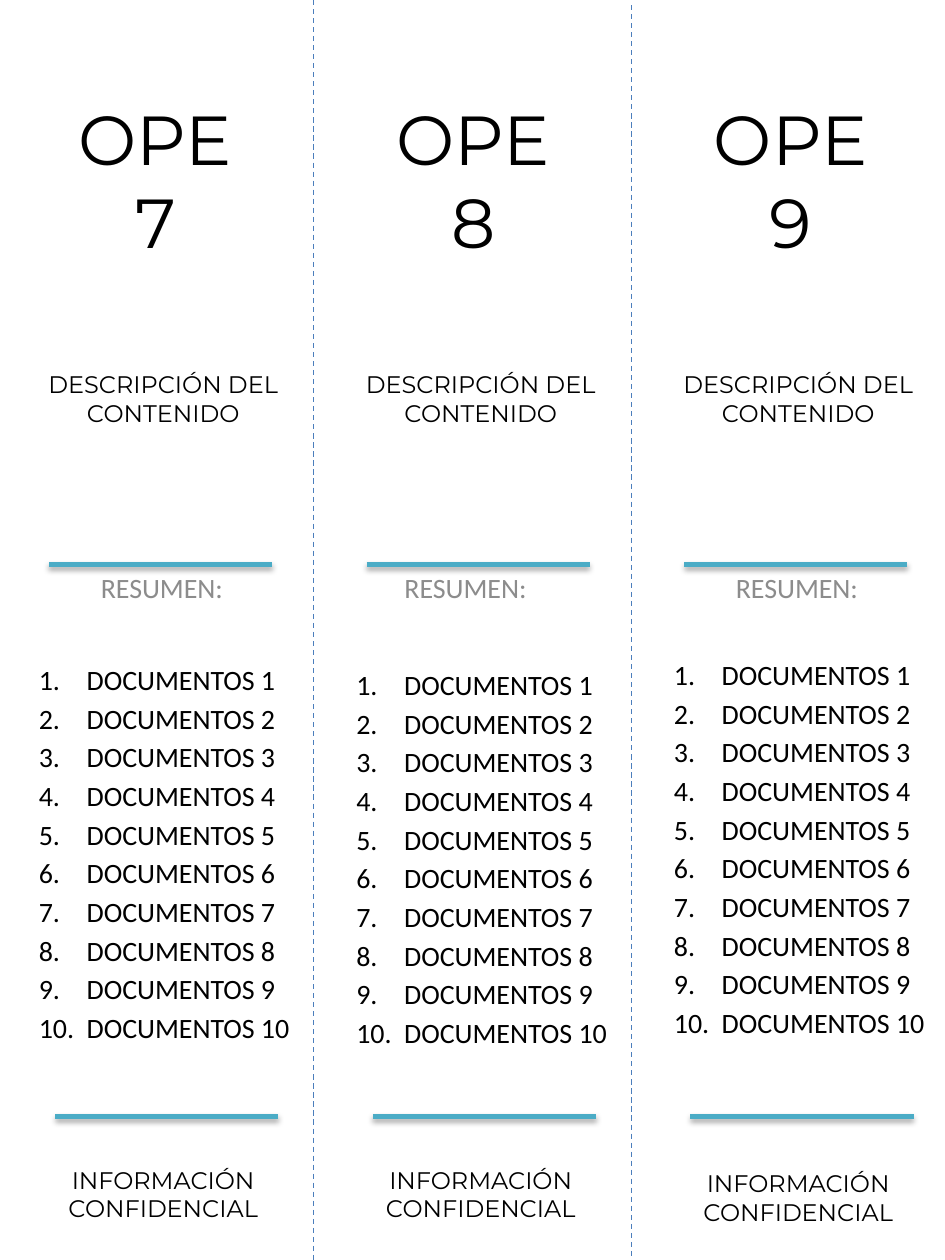
from lxml import etree
from pptx import Presentation, oxml
from pptx.dml.color import RGBColor
from pptx.enum import dml, shapes, text
from pptx.oxml import ns
from pptx.util import Inches, Pt

BLACK = RGBColor(0x00, 0x00, 0x00)
GRAY = RGBColor(0x8C, 0x8C, 0x8C)
TEAL = RGBColor(0x4B, 0xAC, 0xC6)
BLUE = RGBColor(0x4B, 0x7E, 0xBC)

COLUMN_PITCH = 2.52
COLUMN_LEFT = 0.21
LABEL_SIZE = (2.05, 0.67)
DOCUMENTS = [f"DOCUMENTOS {number}" for number in range(1, 11)]
SHADOW = (
    f'<a:effectLst {ns.nsdecls("a")}>'
    '<a:outerShdw blurRad="40000" dist="23000" dir="5400000" rotWithShape="0">'
    '<a:srgbClr val="000000"><a:alpha val="35000"/></a:srgbClr>'
    '</a:outerShdw></a:effectLst>'
)


def number_paragraph(paragraph):
    """Give a paragraph a hanging automatic number."""
    properties = paragraph._p.get_or_add_pPr()
    properties.set("marL", str(Inches(0.38)))
    properties.set("indent", str(-Inches(0.38)))
    etree.SubElement(properties, ns.qn("a:buFont"), typeface="+mj-lt")
    etree.SubElement(properties, ns.qn("a:buAutoNum"), type="arabicPeriod")


def write(slide, lines, left, top, width, height, holder=None, font="Calibri",
          size=16, color=BLACK, align=text.PP_ALIGN.CENTER,
          anchor=text.MSO_ANCHOR.TOP, numbered=False):
    """Write lines into a placeholder or a new text box."""
    box = (Inches(left), Inches(top), Inches(width), Inches(height))
    if holder is None:
        holder = slide.shapes.add_textbox(*box)
    else:
        holder.left, holder.top, holder.width, holder.height = box
    frame = holder.text_frame
    frame.word_wrap = True
    frame.auto_size = text.MSO_AUTO_SIZE.NONE
    frame.vertical_anchor = anchor
    for index, line in enumerate(lines):
        paragraph = frame.paragraphs[0] if index == 0 else frame.add_paragraph()
        paragraph.text = line
        paragraph.alignment = align
        paragraph.space_before = Pt(2.9 if index else 0)
        if numbered:
            number_paragraph(paragraph)
        for run in paragraph.runs:
            run.font.name = font
            run.font.size = Pt(size)
            run.font.color.rgb = color


def write_heading(slide, line, left, top, size=(2.05, 0.67), points=13.7, holder=None):
    """Write a centred Montserrat label."""
    write(slide, [line], left, top, *size, holder=holder, font="Montserrat",
          size=points, anchor=text.MSO_ANCHOR.MIDDLE)


def draw_line(slide, start, end, color, weight, dash=None, shadow=False):
    """Draw a straight line between two points."""
    line = slide.shapes.add_connector(
        shapes.MSO_CONNECTOR.STRAIGHT, *map(Inches, start + end))
    line.line.color.rgb = color
    line.line.width = Pt(weight)
    if dash is not None:
        line.line.dash_style = dash
    effects = SHADOW if shadow else f'<a:effectLst {ns.nsdecls("a")}/>'
    line._element.spPr.append(oxml.parse_xml(effects))


def draw_rule(slide, left, top):
    """Draw a shadowed teal rule."""
    draw_line(slide, (left, top), (left + 1.77, top), TEAL, 3, shadow=True)


def build_spine(slide, left, number, summary_shift, list_top, footer_top,
                title=None, subtitle=None):
    """Build one binder spine label starting at the given left edge."""
    write_heading(slide, f"OPE\v{number}", left, 0.75, (2.05, 1.34), 39.6, title)
    write_heading(slide, "DESCRIPCIÓN DEL CONTENIDO", left + 0.06, 2.83)
    write(slide, ["RESUMEN:"], left + summary_shift, 4.48, 2.39, 0.44,
          holder=subtitle, color=GRAY)
    write(slide, DOCUMENTS, left, list_top, 2.2, 3.46,
          align=text.PP_ALIGN.LEFT, numbered=True)
    draw_rule(slide, left + 0.23, 8.86)
    draw_rule(slide, left + 0.18, 4.48)
    write_heading(slide, "INFORMACIÓN CONFIDENCIAL", left + 0.06, footer_top)


def build_divider(slide, left, top):
    """Draw a dashed cutting line between two spines."""
    draw_line(slide, (left, top), (left, top + 10), BLUE, 0.75,
              dash=dml.MSO_LINE.DASH)


def main():
    """Build the sheet of three spines and save it."""
    deck = Presentation()
    deck.slide_width, deck.slide_height = Inches(7.5), Inches(10)
    slide = deck.slides.add_slide(deck.slide_layouts[0])
    spines = [
        dict(number=7, summary_shift=-0.12, list_top=5.21, footer_top=9.14,
             title=slide.shapes.title, subtitle=slide.placeholders[1]),
        dict(number=8, summary_shift=-0.23, list_top=5.25, footer_top=9.14),
        dict(number=9, summary_shift=-0.12, list_top=5.17, footer_top=9.17),
    ]
    for column, spine in enumerate(spines):
        build_spine(slide, COLUMN_LEFT + column * COLUMN_PITCH, **spine)
    for column, top in enumerate((0, 0.04)):
        build_divider(slide, 2.49 + column * COLUMN_PITCH, top)
    deck.save("out.pptx")


if __name__ == "__main__":
    main()
